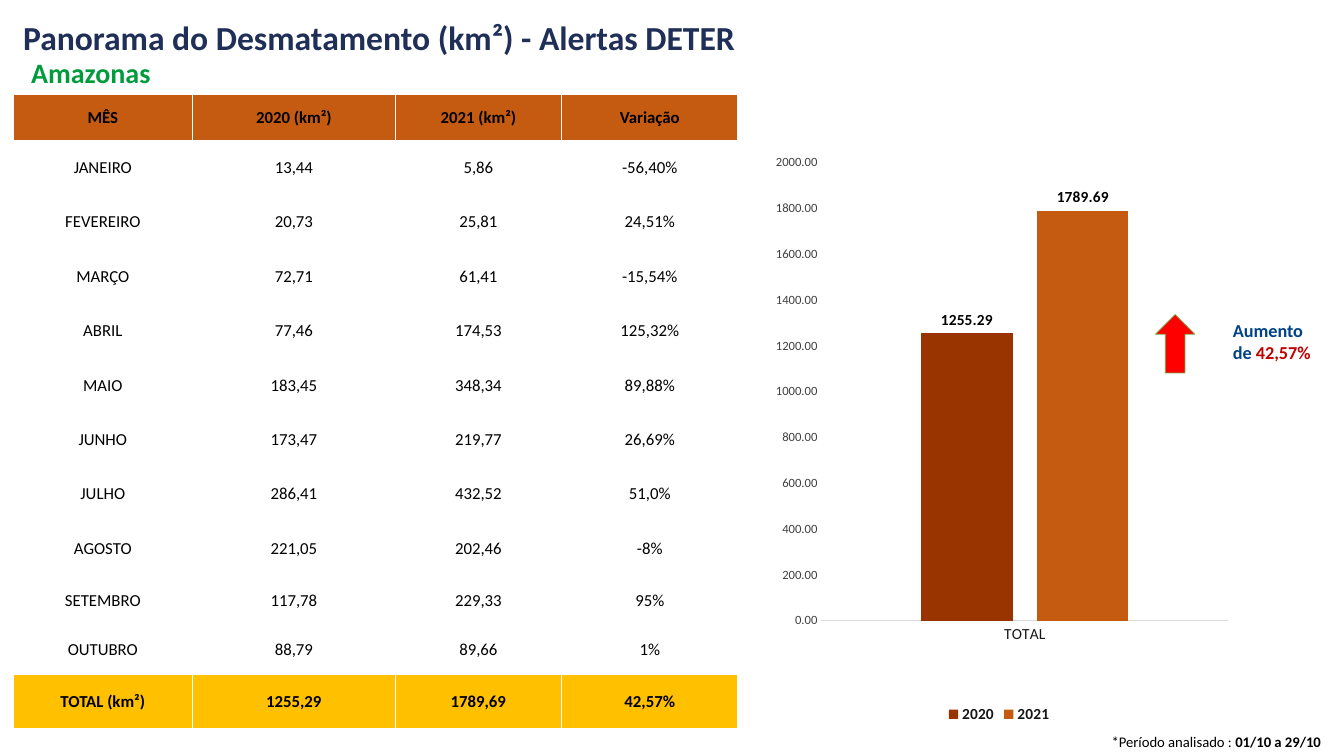
import pptx
import pptx.chart.data
import pptx.dml.color
import pptx.enum.chart
import pptx.enum.shapes
import pptx.enum.text
import pptx.oxml
import pptx.oxml.ns
import pptx.util

PX = 9144  # 100 px to the inch
FONT = "Calibri"
COLORS = {
    "navy": "202F58", "green": "009B3D", "blue": "004386", "crimson": "C00000",
    "red": "FF0000", "outline": "70AD47", "black": "000000", "white": "FFFFFF",
    "orange": "C55A11", "yellow": "FFC000", "brown": "993300",
    "gray": "404040", "ink": "181717", "axis": "D9D9D9",
}
ALIGN = pptx.enum.text.PP_ALIGN


def style(font, size, color, bold=False):
    font.name = FONT
    font.size = pptx.util.Pt(size)
    font.bold = bold
    font.color.rgb = pptx.dml.color.RGBColor.from_string(COLORS[color])


def add_text(box, paragraphs, size, align=ALIGN.LEFT):
    """Each paragraph is a list of (text, color, bold) runs."""
    left, top, width, height = (n * PX for n in box)
    text_frame = slide.shapes.add_textbox(left, top, width, height).text_frame
    text_frame.word_wrap = True
    for index, runs in enumerate(paragraphs):
        paragraph = text_frame.add_paragraph() if index else text_frame.paragraphs[0]
        paragraph.alignment = align
        for text, color, bold in runs:
            run = paragraph.add_run()
            run.text = text
            style(run.font, size, color, bold)


presentation = pptx.Presentation()
presentation.slide_width = 1333 * PX
presentation.slide_height = 750 * PX
slide = presentation.slides.add_slide(presentation.slide_layouts[6])

# Headings
add_text((13, 12, 842, 50),
         [[("Panorama do Desmatamento (km²) - Alertas DETER", "navy", True)]], 24)
add_text((21, 50, 161, 44), [[("Amazonas", "green", True)]], 20)

# Monthly table
rows = [
    ("MÊS", "2020 (km²)", "2021 (km²)", "Variação"),
    ("JANEIRO", "13,44", "5,86", "-56,40%"),
    ("FEVEREIRO", "20,73", "25,81", "24,51%"),
    ("MARÇO", "72,71", "61,41", "-15,54%"),
    ("ABRIL", "77,46", "174,53", "125,32%"),
    ("MAIO", "183,45", "348,34", "89,88%"),
    ("JUNHO", "173,47", "219,77", "26,69%"),
    ("JULHO", "286,41", "432,52", "51,0%"),
    ("AGOSTO", "221,05", "202,46", "-8%"),
    ("SETEMBRO", "117,78", "229,33", "95%"),
    ("OUTUBRO", "88,79", "89,66", "1%"),
    ("TOTAL (km²)", "1255,29", "1789,69", "42,57%"),
]
column_widths = [178, 201, 165, 175]
row_heights = [45] + [54] * 8 + [49] * 2 + [54]
row_fills = ["orange"] + ["white"] * 10 + ["yellow"]

table = slide.shapes.add_table(len(rows), len(column_widths), 13 * PX, 94 * PX,
                               sum(column_widths) * PX, sum(row_heights) * PX).table
table.first_row = False
table.horz_banding = False
for column, width in zip(table.columns, column_widths):
    column.width = width * PX
for row, height, fill, values in zip(table.rows, row_heights, row_fills, rows):
    row.height = height * PX
    for cell, value in zip(row.cells, values):
        cell.margin_left = cell.margin_right = cell.margin_top = PX
        cell.margin_bottom = 0
        cell.vertical_anchor = pptx.enum.text.MSO_ANCHOR.MIDDLE
        cell.text_frame.text = value
        paragraph = cell.text_frame.paragraphs[0]
        paragraph.alignment = ALIGN.CENTER
        style(paragraph.runs[0].font, 12, "black", fill != "white")
        properties = cell._tc.get_or_add_tcPr()
        for side in "LRTB":
            properties.append(pptx.oxml.parse_xml(
                f'<a:ln{side} {pptx.oxml.ns.nsdecls("a")} w="12700"><a:solidFill>'
                f'<a:srgbClr val="{COLORS["white"]}"/></a:solidFill></a:ln{side}>'))
        cell.fill.solid()
        cell.fill.fore_color.rgb = pptx.dml.color.RGBColor.from_string(COLORS[fill])

# Period note
add_text((1074, 722, 246, 28),
         [[("*Período analisado : ", "black", False), ("01/10 a 29/10", "black", True)]],
         10.5, ALIGN.RIGHT)

# Increase arrow and its caption
arrow = slide.shapes.add_shape(pptx.enum.shapes.MSO_SHAPE.DOWN_ARROW,
                               1146 * PX, 312 * PX, 39 * PX, 58 * PX)
arrow.rotation = 180
arrow.shadow.inherit = False
arrow.fill.solid()
arrow.fill.fore_color.rgb = pptx.dml.color.RGBColor.from_string(COLORS["red"])
arrow.line.color.rgb = pptx.dml.color.RGBColor.from_string(COLORS["outline"])
arrow.line.width = pptx.util.Pt(0.5)
add_text((1213, 312, 107, 54),
         [[("Aumento", "blue", True)],
          [("de ", "blue", True), ("42,57%", "crimson", True)]], 13)

# Chart of totals
chart_data = pptx.chart.data.CategoryChartData(number_format="0.00")
chart_data.categories = ["TOTAL"]
chart_data.add_series("2020", [1255.29])
chart_data.add_series("2021", [1789.69])
chart = slide.shapes.add_chart(pptx.enum.chart.XL_CHART_TYPE.COLUMN_CLUSTERED,
                               759 * PX, 132 * PX, 464 * PX, 590 * PX, chart_data).chart
style(chart.font, 10, "gray")
chart.has_title = False
chart.has_legend = True
chart.legend.position = pptx.enum.chart.XL_LEGEND_POSITION.BOTTOM
chart.legend.include_in_layout = False
style(chart.legend.font, 11, "ink", True)

plot = chart.plots[0]
plot.gap_width = 219
plot.overlap = -27
plot.vary_by_categories = False
for series, color in zip(plot.series, ["brown", "orange"]):
    series.format.fill.solid()
    series.format.fill.fore_color.rgb = pptx.dml.color.RGBColor.from_string(COLORS[color])
    labels = series.data_labels
    labels.show_value = True
    labels.number_format = "0.00"
    labels.number_format_is_linked = False
    labels.position = pptx.enum.chart.XL_LABEL_POSITION.OUTSIDE_END
    style(labels.font, 11, "black", True)

# Axes
for axis, size, color in ((chart.category_axis, 11, "ink"), (chart.value_axis, 9, "gray")):
    axis.major_tick_mark = axis.minor_tick_mark = pptx.enum.chart.XL_TICK_MARK.NONE
    axis.has_major_gridlines = False
    style(axis.tick_labels.font, size, color)
category_line = chart.category_axis.format.line
category_line.color.rgb = pptx.dml.color.RGBColor.from_string(COLORS["axis"])
category_line.width = pptx.util.Pt(0.75)
value_axis = chart.value_axis
value_axis.format.line.fill.background()
value_axis.minimum_scale = 0
value_axis.maximum_scale = 2000
value_axis.major_unit = 200
value_axis.tick_labels.number_format = "0.00"
value_axis.tick_labels.number_format_is_linked = False

# Fixed plot area
plot_area = chart._chartSpace.chart.plotArea
for layout in plot_area.findall(pptx.oxml.ns.qn("c:layout")):
    plot_area.remove(layout)
edges = "".join(f'<c:{name} val="{value}"/>' for name, value in (
    ("layoutTarget", "inner"), ("xMode", "edge"), ("yMode", "edge"),
    ("x", 0.12), ("y", 0.05), ("w", 0.87), ("h", 0.77)))
plot_area.insert(0, pptx.oxml.parse_xml(
    f'<c:layout {pptx.oxml.ns.nsdecls("c")}><c:manualLayout>{edges}'
    '</c:manualLayout></c:layout>'))

presentation.save("out.pptx")
